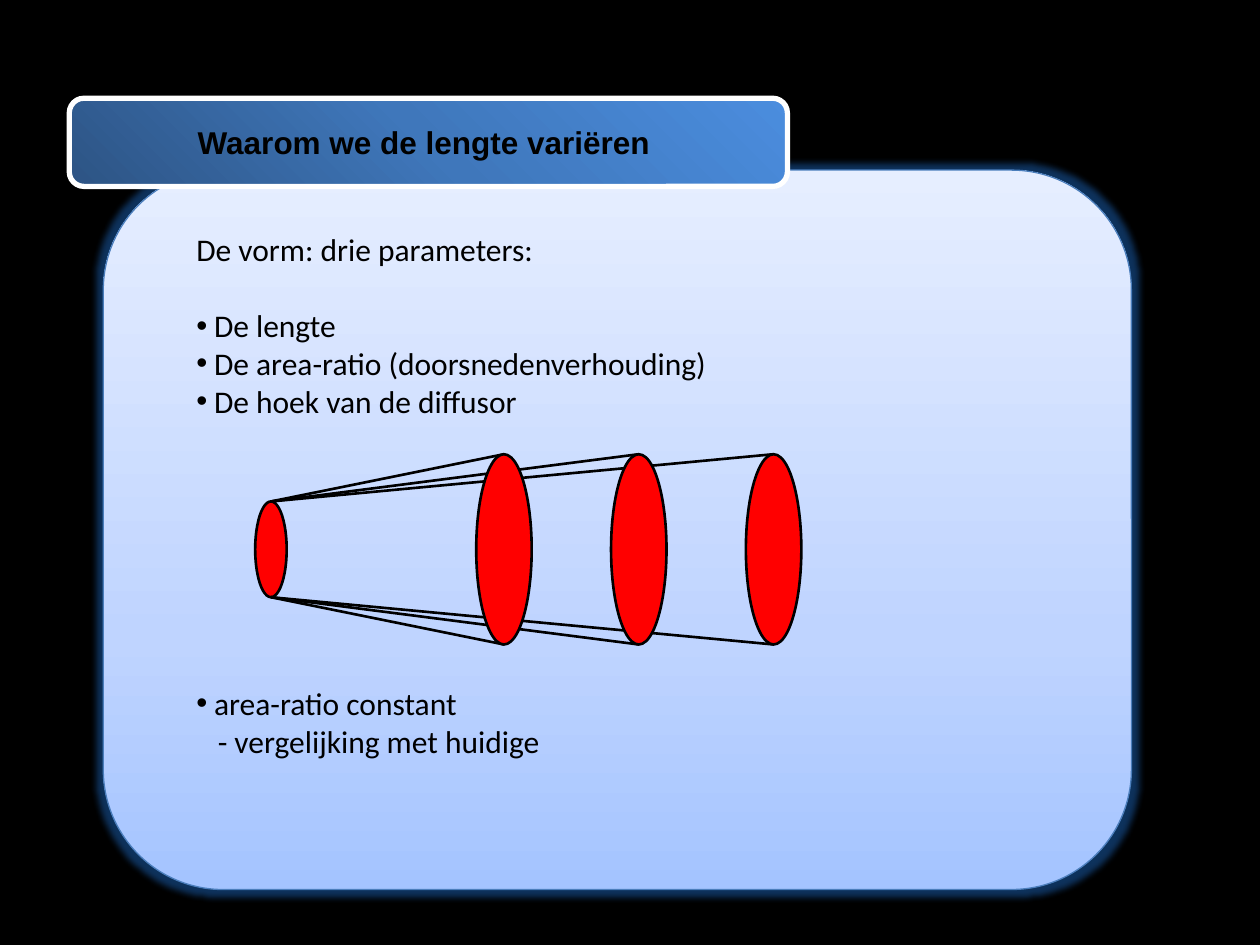
from lxml import etree
from pptx import Presentation
from pptx.dml.color import RGBColor
from pptx.enum import shapes, text
from pptx.oxml.ns import qn
from pptx.util import Inches, Pt

THEME = {
    "background": "000000",
    "text": "000000",
    "outline": "000000",
    "section": "FF0000",
    "panel": [(0, "A4C4FF"), (35, "BFD4FF"), (100, "E6EEFF")],
    "panel_line": "4B7EBC",
    "glow": "1F6FCC",
    "banner": [(0, "2D5484"), (50, "3F77BB"), (100, "4B8DDE")],
    "banner_line": "FFFFFF",
    "title_font": "Arial",
    "body_font": "Calibri",
    "size": 18,
}

TITLE = "Waarom we de lengte variëren"
# text, bulleted, left margin in inches, space before in points
BODY = [
    ("De vorm: drie parameters:", False, 0, 0),
    ("De lengte", True, 0.14, 21.7),
    ("De area-ratio (doorsnedenverhouding)", True, 0.14, 0),
    ("De hoek van de diffusor", True, 0.14, 0),
    ("area-ratio constant", True, 0.14, 151),
    ("- vergelijking met huidige", False, 0.17, 0),
]
PANEL_BOX = (0.82, 1.35, 8.16, 5.71)
BANNER_BOX = (0.55, 0.78, 5.7, 0.7)
BODY_BOX = (1.46, 1.78, 6.22, 4.31)

AXIS_Y = 4.36
INLET_X, INLET_WIDTH, INLET_HEIGHT = 2.15, 0.25, 0.76
OUTLET_XS = (4.0, 5.07, 6.14)
OUTLET_WIDTH, OUTLET_HEIGHT = 0.44, 1.51


def rgb(value):
    return RGBColor.from_string(value)


def set_line(shape, color, width):
    shape.line.color.rgb = rgb(color)
    shape.line.width = Pt(width)


def add_preset(slide, kind, box, line_color, line_width):
    shape = slide.shapes.add_shape(kind, *map(Inches, box))
    shape.shadow.inherit = False
    set_line(shape, line_color, line_width)
    return shape


def fill_gradient(shape, stops, angle):
    """Fill with (percent, colour) stops; angle is counter-clockwise."""
    shape.fill.gradient()
    shape.fill.gradient_angle = angle
    stop_list = shape._element.spPr.find(".//" + qn("a:gsLst"))
    for stop in list(stop_list):
        stop_list.remove(stop)
    for percent, color in stops:
        stop = etree.SubElement(stop_list, qn("a:gs"), pos=str(percent * 1000))
        etree.SubElement(stop, qn("a:srgbClr"), val=color)


def add_glow(shape, color, radius, opacity):
    effects = shape._element.spPr.find(qn("a:effectLst"))
    glow = etree.SubElement(effects, qn("a:glow"), rad=str(Pt(radius)))
    tint = etree.SubElement(glow, qn("a:srgbClr"), val=color)
    etree.SubElement(tint, qn("a:alpha"), val=str(opacity * 1000))


def set_font(paragraph, name, bold=False):
    font = paragraph.font
    font.name, font.size, font.bold = name, Pt(THEME["size"]), bold
    font.color.rgb = rgb(THEME["text"])


def add_panel(slide):
    panel = add_preset(slide, shapes.MSO_SHAPE.ROUNDED_RECTANGLE, PANEL_BOX,
                       THEME["panel_line"], 0.75)
    fill_gradient(panel, THEME["panel"], 90)
    add_glow(panel, THEME["glow"], 8, 45)


def add_banner(slide):
    banner = add_preset(slide, shapes.MSO_SHAPE.ROUNDED_RECTANGLE, BANNER_BOX,
                        THEME["banner_line"], 3)
    fill_gradient(banner, THEME["banner"], 45)
    frame = banner.text_frame
    frame.text = TITLE
    frame.margin_right = Inches(0.17)
    frame.vertical_anchor = text.MSO_ANCHOR.MIDDLE
    frame.paragraphs[0].alignment = text.PP_ALIGN.CENTER
    set_font(frame.paragraphs[0], THEME["title_font"], bold=True)


def add_body(slide):
    frame = slide.shapes.add_textbox(*map(Inches, BODY_BOX)).text_frame
    frame.word_wrap = True
    for index, (words, bulleted, margin, space) in enumerate(BODY):
        paragraph = frame.add_paragraph() if index else frame.paragraphs[0]
        paragraph.text = words
        if space:
            paragraph.space_before = Pt(space)
        properties = paragraph._p.get_or_add_pPr()
        properties.set("marL", str(Inches(margin)))
        if bulleted:
            properties.set("indent", str(-Inches(margin)))
            etree.SubElement(properties, qn("a:buFont"), typeface="Arial")
            etree.SubElement(properties, qn("a:buChar"), char="•")
        set_font(paragraph, THEME["body_font"])


def add_section(slide, x, width, height):
    box = (x - width / 2, AXIS_Y - height / 2, width, height)
    section = add_preset(slide, shapes.MSO_SHAPE.OVAL, box, THEME["outline"], 1.5)
    section.fill.solid()
    section.fill.fore_color.rgb = rgb(THEME["section"])


def add_wall(slide, outlet_x, side):
    """Join inlet and outlet along the top (side -1) or bottom (side 1)."""
    ends = (INLET_X, AXIS_Y + side * INLET_HEIGHT / 2,
            outlet_x, AXIS_Y + side * OUTLET_HEIGHT / 2)
    wall = slide.shapes.add_connector(shapes.MSO_CONNECTOR.STRAIGHT,
                                      *map(Inches, ends))
    set_line(wall, THEME["outline"], 1.5)
    etree.SubElement(wall._element.spPr, qn("a:effectLst"))


def add_diffusers(slide):
    add_section(slide, INLET_X, INLET_WIDTH, INLET_HEIGHT)
    for outlet_x in OUTLET_XS:
        for side in (-1, 1):
            add_wall(slide, outlet_x, side)
    for outlet_x in OUTLET_XS:
        add_section(slide, outlet_x, OUTLET_WIDTH, OUTLET_HEIGHT)


def main():
    presentation = Presentation()
    presentation.slide_width, presentation.slide_height = Inches(10), Inches(7.5)
    slide = presentation.slides.add_slide(presentation.slide_layouts[6])
    slide.background.fill.solid()
    slide.background.fill.fore_color.rgb = rgb(THEME["background"])
    add_panel(slide)
    add_banner(slide)
    add_body(slide)
    add_diffusers(slide)
    presentation.save("out.pptx")


if __name__ == "__main__":
    main()
